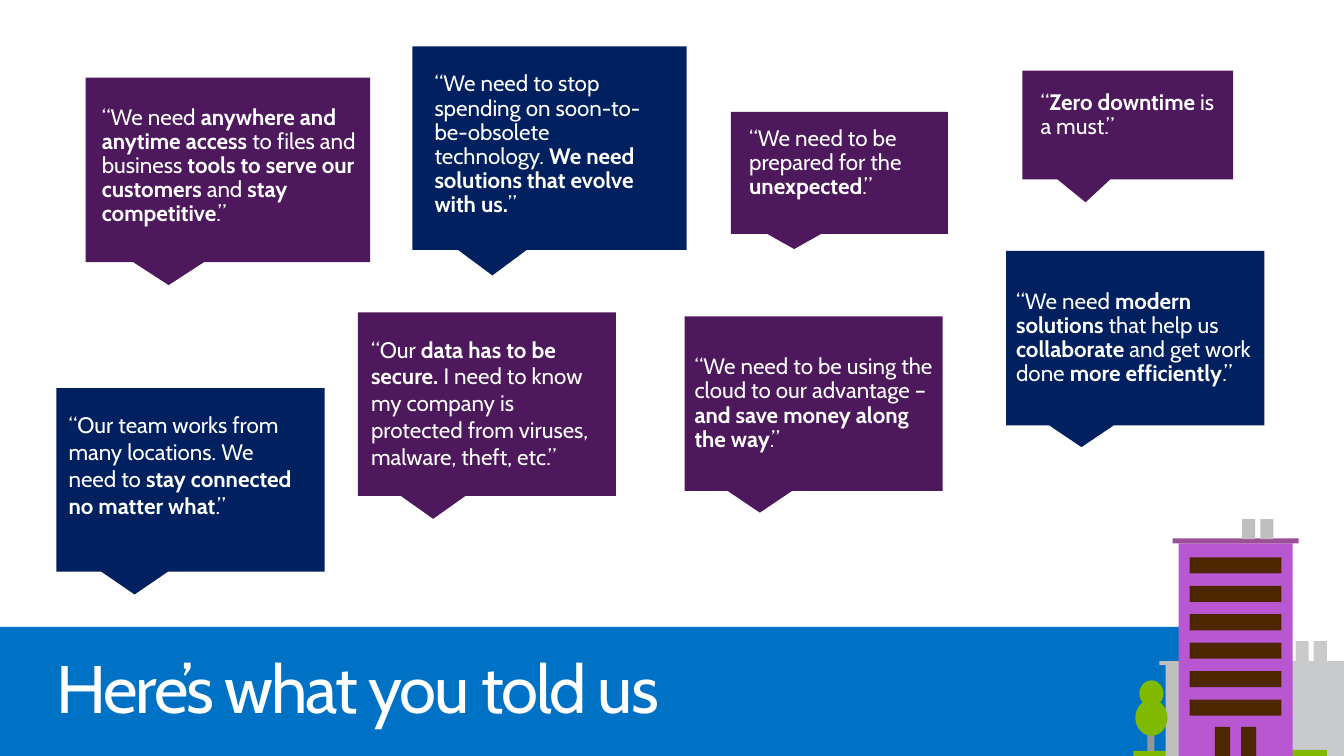
from pptx import Presentation
from pptx.dml.color import RGBColor
from pptx.enum.shapes import MSO_SHAPE
from pptx.enum.text import MSO_ANCHOR, MSO_AUTO_SIZE, PP_ALIGN
from pptx.util import Inches, Pt

RECT = MSO_SHAPE.RECTANGLE
OVAL = MSO_SHAPE.OVAL
CALLOUT = MSO_SHAPE.RECTANGULAR_CALLOUT
TOP, MIDDLE = MSO_ANCHOR.TOP, MSO_ANCHOR.MIDDLE
LEFT = PP_ALIGN.LEFT
NO_FIT = MSO_AUTO_SIZE.NONE

FONT = "Cabin"
WIDTH, HEIGHT = 13.33, 7.5
COLORS = {
    "white": "FFFFFF", "blue": "0072C6", "navy": "002060", "plum": "4E195C",
    "green": "7FBA00", "light_gray": "C9CACB", "gray": "BFBFBF", "trunk": "969696",
    "tower": "B957D2", "roof": "9B4F96", "brown": "4D2600",
}

# Quotes mark their bold words with asterisks.
QUOTES = [
    ("plum", (0.85, 0.77, 2.82, 1.83), (1.01, 1.05, 2.55, 1.45), 0.9,
     "“We need *anywhere and anytime access *to files and business "
     "*tools to serve our customers *and *stay competitive*.”"),
    ("navy", (9.98, 2.49, 2.56, 1.73), None, 0.9,
     "“We need *modern solutions* that help us *collaborate* and get work done "
     "*more efficiently*.”"),
    ("plum", (6.79, 3.14, 2.56, 1.73), None, 0.9,
     "“We need to be using the cloud to our advantage – "
     "*and save money along the way*.”"),
    ("plum", (10.14, 0.7, 2.09, 1.08), (10.32, 0.9, 1.85, 0.48), 0.9,
     "“*Zero downtime *is a must.”"),
    ("navy", (4.09, 0.46, 2.72, 2.02), (4.31, 0.72, 2.17, 1.7), 0.9,
     "“We need to stop spending on soon-to-be-obsolete technology. "
     "*We need solutions that evolve with us.*”"),
    ("navy", (0.56, 3.85, 2.66, 1.82), (0.68, 4.08, 2.31, 1.59), 1.0,
     "“Our team works from many locations. We need to "
     "*stay connected no matter what*.”"),
    ("plum", (3.55, 3.1, 2.56, 1.82), (3.68, 3.33, 2.31, 1.59), 1.0,
     "“Our *data has to be secure. *I need to know my company is protected "
     "from viruses, malware, theft, etc.”"),
    ("plum", (7.25, 1.11, 2.15, 1.21), (7.43, 1.26, 1.72, 0.73), 0.9,
     "“We need to be prepared for the *unexpected*.”"),
]


def color(name):
    """Return the named colour."""
    return RGBColor.from_string(COLORS[name])


def paint(sp, fill):
    """Give a shape a plain fill with no line or shadow."""
    sp.shadow.inherit = False
    sp.fill.solid()
    sp.fill.fore_color.rgb = color(fill)
    sp.line.fill.background()


def add_block(shapes, kind, box, fill):
    """Add a filled preset shape."""
    sp = shapes.add_shape(kind, *map(Inches, box))
    paint(sp, fill)
    return sp


def set_frame(tf, anchor, side=0, edge=0):
    """Set wrapping, anchor and margins of a text frame."""
    tf.word_wrap = True
    tf.auto_size = NO_FIT
    tf.vertical_anchor = anchor
    tf.margin_left = tf.margin_right = Inches(side)
    tf.margin_top = tf.margin_bottom = Inches(edge)


def add_run(p, text, size, bold=False):
    """Add one white run to a paragraph."""
    r = p.add_run()
    r.text = text
    r.font.name = FONT
    r.font.size = Pt(size)
    r.font.bold = bold
    r.font.color.rgb = color("white")
    return r


def add_quote(s, fill, box, text_box, spacing, quote):
    """Add a speech callout, with its words inside or in a grouped text box."""
    shapes = s.shapes.add_group_shape().shapes if text_box else s.shapes
    sp = add_block(shapes, CALLOUT, box, fill)
    if box[3] < 1.1:
        sp.adjustments[0], sp.adjustments[1] = -0.2, 0.71
    if text_box:
        tf = shapes.add_textbox(*map(Inches, text_box)).text_frame
        set_frame(tf, TOP)
    else:
        tf = sp.text_frame
        set_frame(tf, MIDDLE, 0.1, 0.05)
    p = tf.paragraphs[0]
    p.alignment = LEFT
    p.line_spacing = spacing
    for i, part in enumerate(quote.split("*")):
        add_run(p, part, 16, i % 2 == 1)


def add_back_building(shapes, left, fill):
    """Add a flat building outline with two chimneys, ending at the slide edge."""
    outline = [(0.69, 6.56), (0.69, 6.36), (0.82, 6.36), (0.82, 6.56),
               (0.87, 6.56), (0.87, 6.36), (1, 6.36), (1, 6.56),
               (1.25, 6.56), (1.25, 6.6), (1.19, 6.6), (1.19, HEIGHT),
               (0.06, HEIGHT), (0.06, 6.6), (0, 6.6), (0, 6.56)]
    points = [(Inches(min(left + x, WIDTH)), Inches(y)) for x, y in outline]
    builder = shapes.build_freeform(*points[0])
    builder.add_line_segments(points[1:], close=True)
    paint(builder.convert_to_shape(), fill)


def add_town(s):
    """Add the group of buildings, lawns and tree."""
    shapes = s.shapes.add_group_shape().shapes
    add_block(shapes, RECT, (11.24, 7.45, 0.67, 0.05), "green")
    add_back_building(shapes, 12.16, "light_gray")
    add_block(shapes, RECT, (12.73, 7.44, 0.43, 0.06), "green")
    add_back_building(shapes, 11.5, "gray")
    add_block(shapes, RECT, (11.38, 7.18, 0.07, 0.27), "trunk")
    add_block(shapes, OVAL, (11.26, 6.94, 0.32, 0.36), "green")
    add_block(shapes, OVAL, (11.3, 6.75, 0.24, 0.26), "green")
    add_block(shapes, RECT, (11.69, 5.39, 1.13, 2.11), "tower")
    add_block(shapes, RECT, (11.63, 5.34, 1.25, 0.05), "roof")
    for door_left in (12.05, 12.31):
        add_block(shapes, RECT, (door_left, 7.21, 0.15, 0.29), "brown")
    for floor in range(6):
        add_block(shapes, RECT, (11.8, 5.53 + floor * 1.41 / 5, 0.91, 0.16), "brown")
    for chimney_left in (12.32, 12.5):
        add_block(shapes, RECT, (chimney_left, 5.15, 0.13, 0.2), "gray")


def add_title(s, text):
    """Place the title placeholder in front of the bar."""
    sp = s.shapes.title
    sp.left, sp.top, sp.width, sp.height = map(Inches, (0.56, 6.41, 10.17, 0.81))
    s.shapes._spTree.append(sp._element)
    set_frame(sp.text_frame, TOP)
    p = sp.text_frame.paragraphs[0]
    p.alignment = LEFT
    r = add_run(p, text, 48)
    r._r.get_or_add_rPr().set("spc", "-150")


def main():
    """Build and save the slide."""
    prs = Presentation()
    prs.slide_width, prs.slide_height = Inches(WIDTH), Inches(HEIGHT)
    s = prs.slides.add_slide(prs.slide_layouts[5])
    add_block(s.shapes, RECT, (0, 6.22, 11.79, 1.28), "blue")
    add_town(s)
    add_title(s, "Here’s what you told us")
    for quote in QUOTES:
        add_quote(s, *quote)
    prs.save("out.pptx")


if __name__ == "__main__":
    main()
